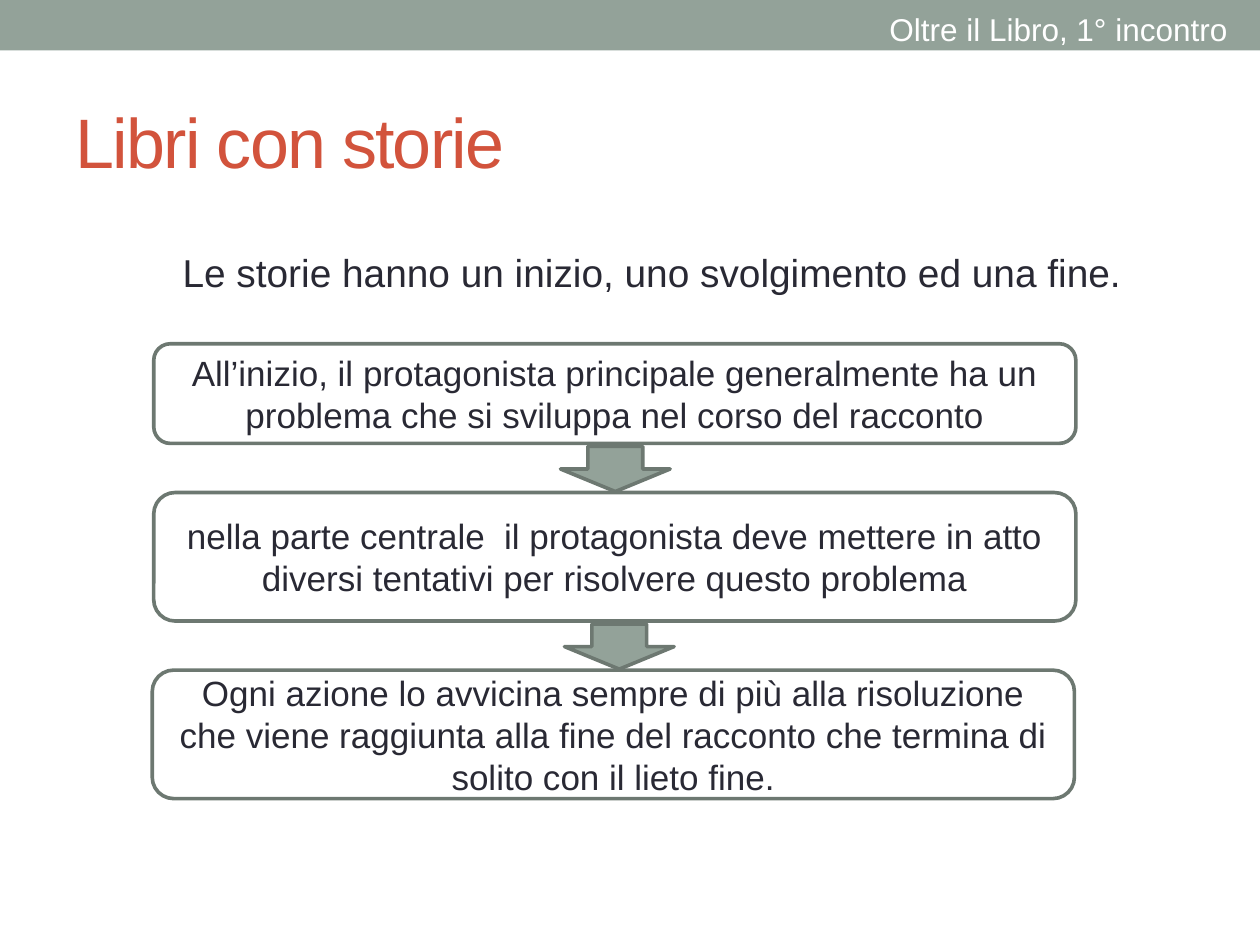
from pptx import Presentation
from pptx.dml.color import RGBColor
from pptx.enum.shapes import MSO_SHAPE
from pptx.enum.text import MSO_ANCHOR, PP_ALIGN
from pptx.util import Cm, Pt

RECT = MSO_SHAPE.RECTANGLE
ROUND = MSO_SHAPE.ROUNDED_RECTANGLE
ARROW = MSO_SHAPE.DOWN_ARROW
LEFT, CENTER = PP_ALIGN.LEFT, PP_ALIGN.CENTER
MIDDLE = MSO_ANCHOR.MIDDLE
FONT = "Arial"
SAGE, EDGE, INK, RED, WHITE = "93A299", "6D7871", "292934", "D2533C", "FFFFFF"
TOP, GAP = 6.93, 0.99
STEPS = [
    ("All’inizio, il protagonista principale generalmente ha un problema "
     "che si sviluppa nel corso del racconto", 3.1, 2.01, 11.3),
    ("nella parte centrale  il protagonista deve mettere in atto diversi "
     "tentativi per risolvere questo problema", 3.1, 2.59, 11.38),
    ("Ogni azione lo avvicina sempre di più alla risoluzione che viene "
     "raggiunta alla fine del racconto che termina di solito con il lieto "
     "fine.", 3.07, 2.59, None),
]


def color(code):
    return RGBColor.from_string(code)


class Deck:
    """Holds the style and the current slide."""

    def __init__(self):
        self.prs = Presentation()
        self.prs.slide_width, self.prs.slide_height = Cm(25.4), Cm(19.05)
        self.slide = self.prs.slides.add_slide(self.prs.slide_layouts[5])

    def fill_text(self, shape, text, size, ink, align, wrap=True):
        frame = shape.text_frame
        frame.text = text
        frame.word_wrap = wrap
        frame.vertical_anchor = MIDDLE
        para = frame.paragraphs[0]
        para.alignment = align
        font = para.font
        font.name, font.size, font.color.rgb = FONT, Pt(size), color(ink)
        return para

    def title(self, text, *area):
        shape = self.slide.shapes.title
        shape.left, shape.top, shape.width, shape.height = map(Cm, area)
        para = self.fill_text(shape, text, 40, RED, LEFT)
        para.runs[0]._r.get_or_add_rPr().set("spc", "-100")

    def label(self, text, size, ink, align, wrap, *area):
        box = self.slide.shapes.add_textbox(*map(Cm, area))
        self.fill_text(box, text, size, ink, align, wrap)

    def shape(self, kind, fill, line, *area):
        shape = self.slide.shapes.add_shape(kind, *map(Cm, area))
        shape.shadow.inherit = False
        if fill:
            shape.fill.solid()
            shape.fill.fore_color.rgb = color(fill)
        else:
            shape.fill.background()
        if line:
            shape.line.color.rgb = color(line)
            shape.line.width = Pt(2.08)
        else:
            shape.line.fill.background()
        return shape

    def step(self, text, *area):
        box = self.shape(ROUND, None, EDGE, *area)
        self.fill_text(box, text, 20, INK, CENTER)

    def arrow(self, left, top):
        self.shape(ARROW, SAGE, EDGE, left, top, 2.21, 0.91)


def main():
    deck = Deck()
    deck.shape(RECT, SAGE, None, 0, 0, 25.4, 1.02)
    deck.title("Libri con storie", 1.27, 1.47, 22.86, 2.74)
    deck.label("Oltre il Libro, 1° incontro", 18, WHITE, LEFT, False,
               17.68, 0.08, 7.39, 1.02)
    deck.label("Le storie hanno un inizio, uno svolgimento ed una fine.",
               22.2, INK, CENTER, True, 0.85, 4.85, 24.6, 1.25)
    top = TOP
    for text, left, height, tip in STEPS:
        deck.step(text, left, top, 18.59, height)
        if tip:
            deck.arrow(tip, top + height + 0.06)
        top += height + GAP
    deck.prs.save("out.pptx")


if __name__ == "__main__":
    main()
